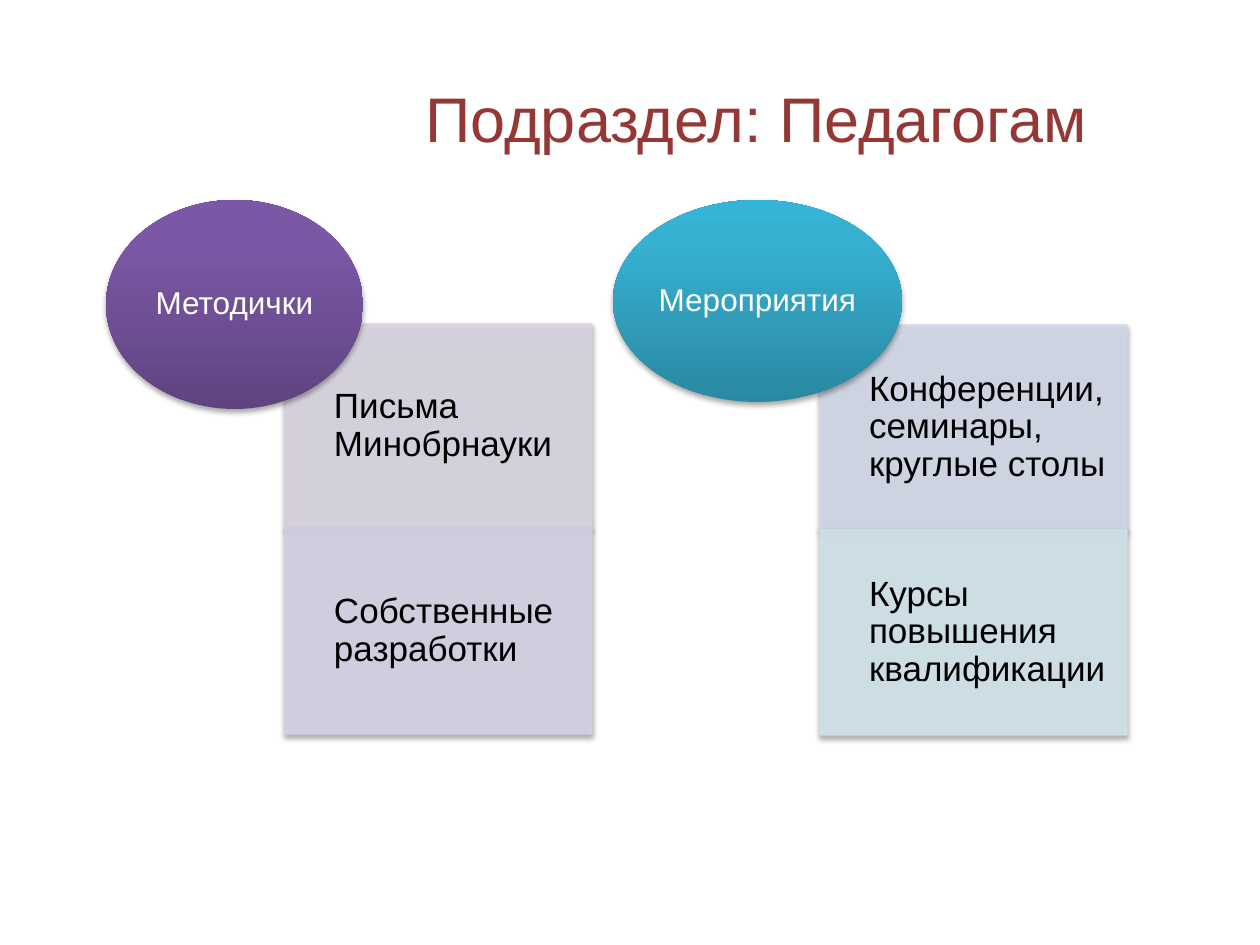
from copy import deepcopy

from lxml.etree import SubElement
from pptx import Presentation
from pptx.dml.color import RGBColor
from pptx.enum.shapes import MSO_SHAPE
from pptx.enum.text import MSO_ANCHOR, MSO_AUTO_SIZE, PP_ALIGN
from pptx.oxml.ns import qn
from pptx.util import Inches, Pt

SCALE = Inches(1) / 126
CARD_WIDTH, CARD_HEIGHT = 307, 205


def px(*lengths):
    return [round(length * SCALE) for length in lengths]


def color(value):
    return RGBColor.from_string(value)


class TopicSlide:
    """Hold the style and the current slide of the topic diagram."""

    font = "Arial"

    def __init__(self, deck):
        self.page = deck.slides.add_slide(deck.slide_layouts[5])

    def label(self, box, text, size, ink, align, margins, spacing=None):
        frame = box.text_frame
        frame.auto_size = MSO_AUTO_SIZE.NONE
        frame.word_wrap = True
        frame.vertical_anchor = MSO_ANCHOR.MIDDLE
        (frame.margin_left, frame.margin_top,
         frame.margin_right, frame.margin_bottom) = px(*margins)
        frame.text = text
        paragraph = frame.paragraphs[0]
        paragraph.alignment = align
        paragraph.line_spacing = spacing
        paragraph.font.name = self.font
        paragraph.font.size = Pt(size)
        paragraph.font.color.rgb = color(ink)

    def title(self, text, place, ink):
        box = self.page.shapes.title
        box.left, box.top, box.width, box.height = px(*place)
        self.label(box, text, 36, ink, PP_ALIGN.CENTER, (13, 6, 13, 6))

    def shape(self, kind, place):
        box = self.page.shapes.add_shape(kind, *px(*place))
        box.shadow.inherit = False
        effects = box._element.spPr.find(qn("a:effectLst"))
        shadow = SubElement(effects, qn("a:outerShdw"), blurRad="40000",
                            dist="23000", dir="5400000", rotWithShape="0")
        black = SubElement(shadow, qn("a:srgbClr"), val="000000")
        SubElement(black, qn("a:alpha"), val="35000")
        return box

    def card(self, text, left, top, tint):
        box = self.shape(MSO_SHAPE.RECTANGLE, (left, top, CARD_WIDTH, CARD_HEIGHT))
        box.fill.solid()
        box.fill.fore_color.rgb = color(tint)
        box.line.color.rgb = color(tint)
        box.line.width = Pt(0.75)
        for tone in box._element.spPr.xpath("./a:solidFill/a:srgbClr | ./a:ln//a:srgbClr"):
            SubElement(tone, qn("a:alpha"), val="90000")
        self.label(box, text, 20, "000000", PP_ALIGN.LEFT, (49, 20, 20, 20), 0.9)

    def bubble(self, text, place, tones):
        box = self.shape(MSO_SHAPE.OVAL, place)
        box.line.fill.background()
        box.fill.gradient()
        box.fill.gradient_angle = 90
        stops = box._element.spPr.find(".//" + qn("a:gsLst"))
        stops.append(deepcopy(stops[-1]))
        for stop, position, tone in zip(box.fill.gradient_stops, (0, 0.8, 1), tones):
            stop.position = position
            stop.color.rgb = color(tone)
        self.label(box, text, 18, "FFFFFF", PP_ALIGN.CENTER, (0, 0, 0, 0), 0.9)


def main():
    deck = Presentation()
    deck.slide_width, deck.slide_height = Inches(10), Inches(7.5)
    slide = TopicSlide(deck)
    slide.title("Подраздел: Педагогам", (315, 38, 882, 158), "953735")
    topics = [
        ("Методички", (106, 200, 257, 209), ("5F4480", "7B58A6", "7C57A8"), 285, 324,
         [("Письма Минобрнауки", "D8D3E0"), ("Собственные разработки", "D2D2E4")]),
        ("Мероприятия", (613, 200, 289, 202), ("2A88A2", "37B1D2", "34B4D6"), 820, 325,
         [("Конференции, семинары, круглые столы", "D1D8E7"),
          ("Курсы повышения квалификации", "D0E3EA")]),
    ]
    for name, place, tones, left, top, cards in topics:
        for row, (text, tint) in enumerate(cards):
            slide.card(text, left, top + row * CARD_HEIGHT, tint)
        slide.bubble(name, place, tones)
    deck.save("out.pptx")


if __name__ == "__main__":
    main()
